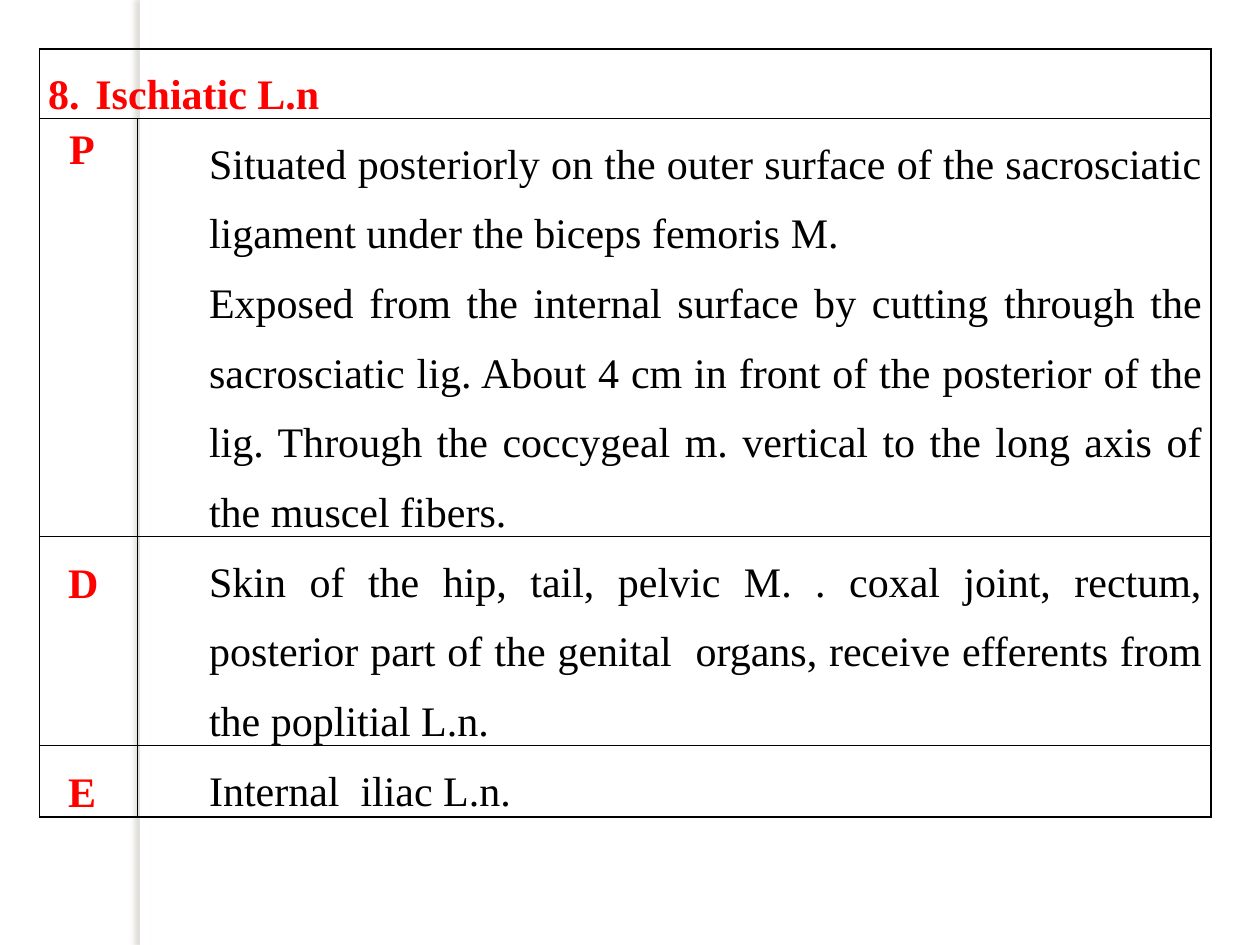
from lxml.etree import SubElement
from pptx import Presentation
from pptx.dml.color import RGBColor
from pptx.enum.shapes import MSO_SHAPE as Shape
from pptx.enum.text import PP_ALIGN as Align
from pptx.oxml import parse_xml
from pptx.oxml.ns import nsdecls, qn
from pptx.util import Pt

WHITE = RGBColor(0xFF, 0xFF, 0xFF)
BLACK = RGBColor(0x00, 0x00, 0x00)
RED = RGBColor(0xFF, 0x00, 0x00)
SHADOW = RGBColor(0x7E, 0x77, 0x63)
FONT = "Times New Roman"

COLUMN_WIDTHS = (56, 613.5)
ROW_HEIGHTS = (39.5, 238.5, 119, 39.5)

# Letter, its left margin, first-line indent, line spacing, side inset; then the texts
ROWS = [
    (("P", 12, 0, 1.15, 5), [
        "Situated posteriorly on the outer surface of the sacrosciatic ligament "
        "under the biceps femoris M.",
        "Exposed from the internal surface by cutting through the sacrosciatic lig. "
        "About 4 cm in front of the posterior of the lig. Through the coccygeal m. "
        "vertical to the long axis of the muscel fibers."]),
    (("D", 18, -3.6, 1.5, 2), [
        "Skin of the hip, tail, pelvic M. . coxal joint, rectum, posterior part of "
        "the genital  organs, receive efferents from the poplitial L.n."]),
    (("E", 14.4, 0, 1.5, 2), ["Internal  iliac L.n."]),
]


def add_strip(page):
    """White vertical strip with a soft shadow to its left."""
    strip = page.shapes.add_shape(Shape.RECTANGLE, Pt(80), 0, Pt(6), Pt(540))
    strip.fill.solid()
    strip.fill.fore_color.rgb = WHITE
    strip.line.fill.background()
    strip.shadow.inherit = False
    effects = strip.element.spPr.find(qn("a:effectLst"))
    effects.append(parse_xml(
        f'<a:outerShdw {nsdecls("a")} blurRad="{Pt(3)}" dist="{Pt(3)}" dir="10800000">'
        f'<a:srgbClr val="{SHADOW}"><a:alpha val="25000"/></a:srgbClr></a:outerShdw>'))


def style_cell(cell, inset=5, top=0):
    """Clear fill, narrow margins and a thin black border on every side."""
    cell.margin_left = cell.margin_right = Pt(inset)
    cell.margin_top, cell.margin_bottom = Pt(top), 0
    cell.fill.background()
    properties = cell._tc.get_or_add_tcPr()
    for place, side in enumerate(("lnL", "lnR", "lnT", "lnB")):
        properties.insert(place, parse_xml(
            f'<a:{side} {nsdecls("a")} w="{Pt(1)}"><a:solidFill>'
            f'<a:srgbClr val="{BLACK}"/></a:solidFill></a:{side}>'))


def write_cell(cell, texts, color, bold, margin, indent=0, spacing=1.5):
    """Justified paragraphs, one for each text."""
    frame = cell.text_frame
    for index, text in enumerate(texts):
        para = frame.add_paragraph() if index else frame.paragraphs[0]
        para.alignment = Align.JUSTIFY
        para.line_spacing = spacing
        properties = para._p.get_or_add_pPr()
        properties.set("marL", str(Pt(margin)))
        properties.set("indent", str(Pt(indent)))
        span = para.add_run()
        span.text = text
        span.font.name = FONT
        span.font.size = Pt(24)
        span.font.bold = bold
        span.font.color.rgb = color


def number_paragraph(para, start):
    numbering = SubElement(para._p.get_or_add_pPr(), qn("a:buAutoNum"))
    numbering.set("type", "arabicPeriod")
    numbering.set("startAt", str(start))


def add_node_table(page):
    table = page.shapes.add_table(
        len(ROW_HEIGHTS), len(COLUMN_WIDTHS), Pt(22.5), Pt(28),
        Pt(sum(COLUMN_WIDTHS)), Pt(sum(ROW_HEIGHTS))).table
    table.first_row = table.horz_banding = False
    for column, width in zip(table.columns, COLUMN_WIDTHS):
        column.width = Pt(width)
    for row, height in zip(table.rows, ROW_HEIGHTS):
        row.height = Pt(height)

    # Numbered heading across both columns
    heading = table.cell(0, 0)
    heading.merge(table.cell(0, 1))
    for cell in table.rows[0].cells:
        style_cell(cell)
    write_cell(heading, ["Ischiatic L.n"], RED, True, 27, -27)
    number_paragraph(heading.text_frame.paragraphs[0], 8)

    # Letter and description rows
    for number, (label, texts) in enumerate(ROWS, start=1):
        letter, margin, indent, spacing, inset = label
        letter_cell, text_cell = table.rows[number].cells
        style_cell(letter_cell, inset, top=1)
        write_cell(letter_cell, [letter], RED, True, margin, indent, spacing)
        style_cell(text_cell)
        write_cell(text_cell, texts, BLACK, False, 36)


def main():
    deck = Presentation()
    deck.slide_width, deck.slide_height = Pt(720), Pt(540)
    page = deck.slides.add_slide(deck.slide_layouts[6])
    page.background.fill.solid()
    page.background.fill.fore_color.rgb = WHITE
    add_strip(page)
    add_node_table(page)
    deck.save("out.pptx")


if __name__ == "__main__":
    main()
